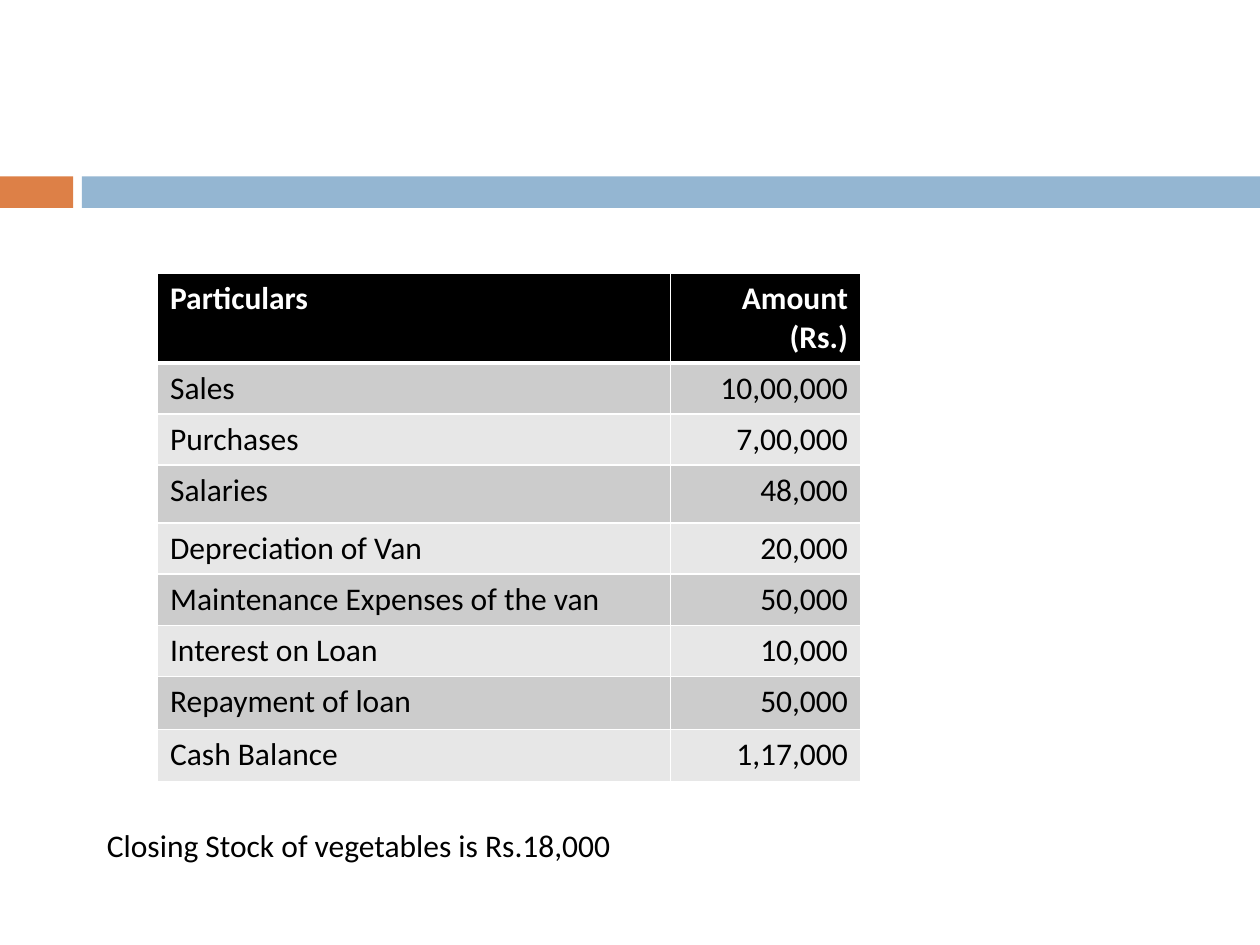
"""Build a slide with a two-tone band, an accounts table and a closing note."""
import lxml.etree
import pptx
import pptx.dml.color
import pptx.enum.shapes
import pptx.enum.text
import pptx.oxml.ns
import pptx.util

RGBColor = pptx.dml.color.RGBColor
ORANGE = RGBColor(0xDD, 0x80, 0x47)
BLUE = RGBColor(0x94, 0xB6, 0xD2)
BLACK = RGBColor(0, 0, 0)
WHITE = RGBColor(0xFF, 0xFF, 0xFF)
STRIPES = (RGBColor(0xE7, 0xE7, 0xE7), RGBColor(0xCC, 0xCC, 0xCC))

SLIDE_WIDTH = pptx.util.Inches(10)
SLIDE_HEIGHT = pptx.util.Inches(7.5)
FONT = "Calibri"
TEXT_SIZE = pptx.util.Pt(18)
THIN, THICK = pptx.util.Pt(1), pptx.util.Pt(3)

ACCOUNTS = (
    ("Particulars", "Amount (Rs.)"),
    ("Sales", "10,00,000"),
    ("Purchases", "7,00,000"),
    ("Salaries", "48,000"),
    ("Depreciation of Van", "20,000"),
    ("Maintenance Expenses of the van", "50,000"),
    ("Interest on Loan", "10,000"),
    ("Repayment of loan", "50,000"),
    ("Cash Balance", "1,17,000"),
)
COLUMN_SHARES = (0.73, 0.27)
ROW_HEIGHT = 0.39
SPECIAL_ROW_HEIGHTS = {0: 0.62, 3: 0.46, 7: 0.42, 8: 0.42}


def inches_box(left, top, width, height):
    """Return a box in slide units from lengths in inches."""
    return tuple(pptx.util.Inches(length) for length in (left, top, width, height))


def format_text(text_frame, color, bold=False):
    """Give every run of the frame the slide's font."""
    for paragraph in text_frame.paragraphs:
        for run in paragraph.runs:
            run.font.name = FONT
            run.font.size = TEXT_SIZE
            run.font.bold = bold
            run.font.color.rgb = color


def add_band(slide, box):
    """Draw the orange block and the blue bar with a gap between them."""
    left, top, width, height = box
    for color, start, end in ((ORANGE, 0, 0.058), (BLUE, 0.065, 1)):
        shape = slide.shapes.add_shape(
            pptx.enum.shapes.MSO_SHAPE.RECTANGLE,
            left + int(width * start), top, int(width * (end - start)), height)
        shape.shadow.inherit = False
        shape.fill.solid()
        shape.fill.fore_color.rgb = color
        shape.line.fill.background()


def set_borders(cell, top, bottom):
    """Put white borders on all four sides of a cell."""
    properties = cell._tc.get_or_add_tcPr()
    widths = {"a:lnL": THIN, "a:lnR": THIN, "a:lnT": top, "a:lnB": bottom}
    for tag, width in widths.items():
        line = lxml.etree.SubElement(properties, pptx.oxml.ns.qn(tag), w=str(int(width)))
        fill = lxml.etree.SubElement(line, pptx.oxml.ns.qn("a:solidFill"))
        lxml.etree.SubElement(fill, pptx.oxml.ns.qn("a:srgbClr"), val=str(WHITE))


def add_accounts_table(slide, box):
    """Place the accounts table with a black header and grey stripes."""
    table = slide.shapes.add_table(len(ACCOUNTS), len(COLUMN_SHARES), *box).table
    for column, share in zip(table.columns, COLUMN_SHARES):
        column.width = int(box[2] * share)
    for row_index, values in enumerate(ACCOUNTS):
        header = row_index == 0
        table.rows[row_index].height = pptx.util.Inches(
            SPECIAL_ROW_HEIGHTS.get(row_index, ROW_HEIGHT))
        for column_index, value in enumerate(values):
            cell = table.cell(row_index, column_index)
            set_borders(cell, THICK if row_index == 1 else THIN, THICK if header else THIN)
            cell.fill.solid()
            cell.fill.fore_color.rgb = BLACK if header else STRIPES[row_index % 2]
            cell.text_frame.text = value
            if column_index == 1:
                cell.text_frame.paragraphs[0].alignment = pptx.enum.text.PP_ALIGN.RIGHT
            format_text(cell.text_frame, WHITE if header else BLACK, header)


def add_closing_note(slide, box):
    """Place the closing stock line below the table."""
    text_frame = slide.shapes.add_textbox(*box).text_frame
    text_frame.word_wrap = False
    text_frame.auto_size = pptx.enum.text.MSO_AUTO_SIZE.SHAPE_TO_FIT_TEXT
    text_frame.text = "Closing Stock of vegetables is Rs.18,000"
    format_text(text_frame, BLACK)


def main():
    """Build and save the presentation."""
    presentation = pptx.Presentation()
    presentation.slide_width = SLIDE_WIDTH
    presentation.slide_height = SLIDE_HEIGHT
    slide = presentation.slides.add_slide(presentation.slide_layouts[6])
    add_band(slide, inches_box(0, 1.4, 10, 0.25))
    add_accounts_table(slide, inches_box(1.25, 2.17, 5.58, 4))
    add_closing_note(slide, inches_box(0.75, 6.51, 4.28, 0.4))
    presentation.save("out.pptx")


if __name__ == "__main__":
    main()
